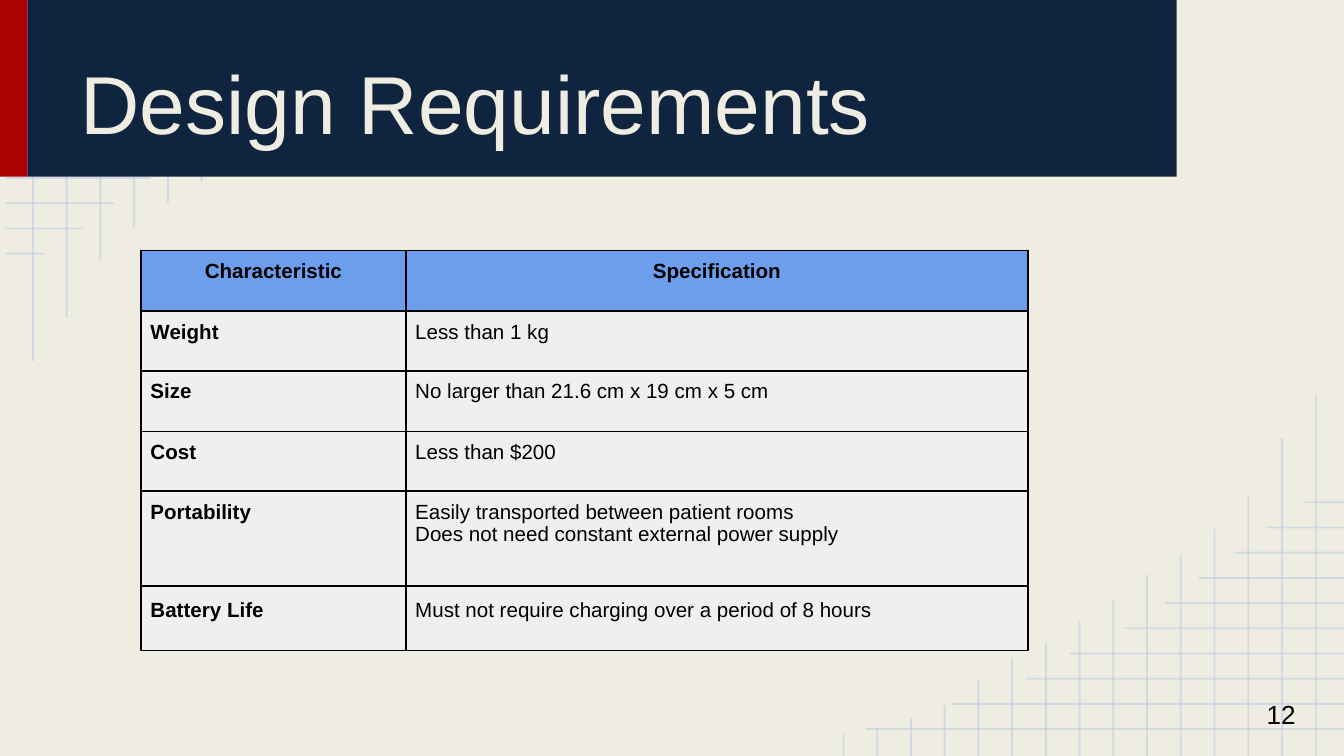
import pptx
import pptx.util
import pptx.dml.color
import pptx.enum.shapes
import pptx.enum.text
import pptx.oxml
import pptx.oxml.ns
import lxml.etree

EMU = 4572  # 200 px to the inch
WIDE, HIGH = 2000, 1125
BAR = 263
ALIGN = pptx.enum.text.PP_ALIGN
CREAM, NAVY, RED, GRID = "EFEDE2", "0F243E", "AB0101", "B7CCE4"
BLACK, BLUE, GREY = "000000", "6D9EEB", "EFEFEF"


def px(size):
    return pptx.util.Emu(round(size * EMU))


def hue(code):
    return pptx.dml.color.RGBColor.from_string(code)


def tag(parent, name, **attrs):
    node = lxml.etree.SubElement(parent, pptx.oxml.ns.qn(name))
    for key, value in attrs.items():
        node.set(key, value)
    return node


class Deck:
    font = "Arial"

    def __init__(self):
        self.show = pptx.Presentation()
        self.show.slide_width, self.show.slide_height = px(WIDE), px(HIGH)
        self.slide = self.show.slides.add_slide(self.show.slide_layouts[5])
        self.shapes = self.slide.shapes
        back = self.slide.background.fill
        back.solid()
        back.fore_color.rgb = hue(CREAM)

    def style(self, para, text, size, color, bold=False, align=ALIGN.LEFT):
        para.text, para.alignment = text, align
        font = para.font
        font.name, font.size, font.bold = self.font, pptx.util.Pt(size), bold
        font.color.rgb = hue(color)

    def inset(self, frame, gap):
        frame.margin_left = frame.margin_right = px(gap)
        frame.margin_top = frame.margin_bottom = px(gap)

    def line(self, x1, y1, x2, y2):
        line = self.shapes.add_connector(
            pptx.enum.shapes.MSO_CONNECTOR.STRAIGHT,
            px(x1), px(y1), px(x2), px(y2))
        line.line.width = pptx.util.Pt(1)
        line.line.color.rgb = hue(GRID)
        props = line.element.spPr
        shade = props.find(".//" + pptx.oxml.ns.qn("a:srgbClr"))
        tag(shade, "a:alpha", val="54000")
        tag(props, "a:effectLst")

    def rect(self, x, y, w, h, color):
        rect = self.shapes.add_shape(
            pptx.enum.shapes.MSO_SHAPE.RECTANGLE, px(x), px(y), px(w), px(h))
        rect.shadow.inherit = False
        rect.fill.solid()
        rect.fill.fore_color.rgb = hue(color)
        rect.line.fill.background()

    def title(self, text, x, y, w, h):
        title = self.shapes.title
        title.left, title.top, title.width, title.height = map(px, (x, y, w, h))
        frame = title.text_frame
        frame.word_wrap = True
        frame.auto_size = pptx.enum.text.MSO_AUTO_SIZE.NONE
        frame.vertical_anchor = pptx.enum.text.MSO_ANCHOR.BOTTOM
        self.inset(frame, 20)
        self.style(frame.paragraphs[0], text, 44, CREAM)
        # Bring the title in front of the bar
        title.element.getparent().append(title.element)

    def text(self, text, x, y, w, h):
        frame = self.shapes.add_textbox(px(x), px(y), px(w), px(h)).text_frame
        frame.word_wrap = True
        self.inset(frame, 20)
        self.style(frame.paragraphs[0], text, 14, BLACK, align=ALIGN.RIGHT)

    def cell(self, cell, text, color, bold, align, space):
        self.inset(cell, 14)
        frame = cell.text_frame
        for i, words in enumerate(text.split("\n")):
            para = frame.add_paragraph() if i else frame.paragraphs[0]
            self.style(para, words, 11, BLACK, bold, align)
            para.line_spacing = space
        # Borders go before the fill
        props = cell._tc.get_or_add_tcPr()
        for side in ("L", "R", "T", "B"):
            edge = tag(props, "a:ln" + side, w=str(pptx.util.Pt(1)))
            tag(tag(edge, "a:solidFill"), "a:srgbClr", val=BLACK)
        cell.fill.solid()
        cell.fill.fore_color.rgb = hue(color)

    def table(self, x, y, cols, highs, rows):
        table = self.shapes.add_table(
            len(rows), len(cols), px(x), px(y),
            px(sum(cols)), px(sum(highs))).table
        for col, wide in zip(table.columns, cols):
            col.width = px(wide)
        for r, (high, row) in enumerate(zip(highs, rows)):
            table.rows[r].height = px(high)
            head = r == 0
            for c, words in enumerate(row):
                self.cell(table.cell(r, c), words, BLUE if head else GREY,
                          head or c == 0, ALIGN.CENTER if head else ALIGN.LEFT,
                          1.15 if r == len(rows) - 1 else 1.0)


def main():
    deck = Deck()

    # Fading grids in two opposite corners
    spans = [712, 584, 474, 408, 326, 266, 216, 162, 116, 58]
    drops = [537, 473, 387, 338, 301, 270, 232, 200,
             168, 144, 112, 76, 56, 40, 32]
    for i, span in enumerate(spans):
        step = 40 + 37.5 * i
        if step > BAR:
            deck.line(8, step, 8 + span, step)
        deck.line(WIDE, HIGH - step, WIDE - span, HIGH - step)
    for i, drop in enumerate(drops):
        step = 50.2 * i
        if drop > BAR:
            deck.line(49 + step, 0, 49 + step, drop)
        deck.line(1958 - step, HIGH - drop, 1958 - step, HIGH)

    # Title bar
    deck.rect(0, -1, 41, BAR + 1, RED)
    deck.rect(41, -1, 1710, BAR + 1, NAVY)
    deck.title("Design Requirements", 100, 23, 1600, 222)

    # Requirements
    deck.table(210, 373, [394, 926], [90, 89, 90, 89, 141, 96], [
        ("Characteristic", "Specification"),
        ("Weight", "Less than 1 kg"),
        ("Size", "No larger than 21.6 cm x 19 cm x 5 cm"),
        ("Cost", "Less than $200"),
        ("Portability", "Easily transported between patient rooms\n"
                        "Does not need constant external power supply"),
        ("Battery Life", "Must not require charging over a period of 8 hours"),
    ])

    # Page number
    deck.text("12", 1786, 1020, 162, 86)
    deck.show.save("out.pptx")


if __name__ == "__main__":
    main()
